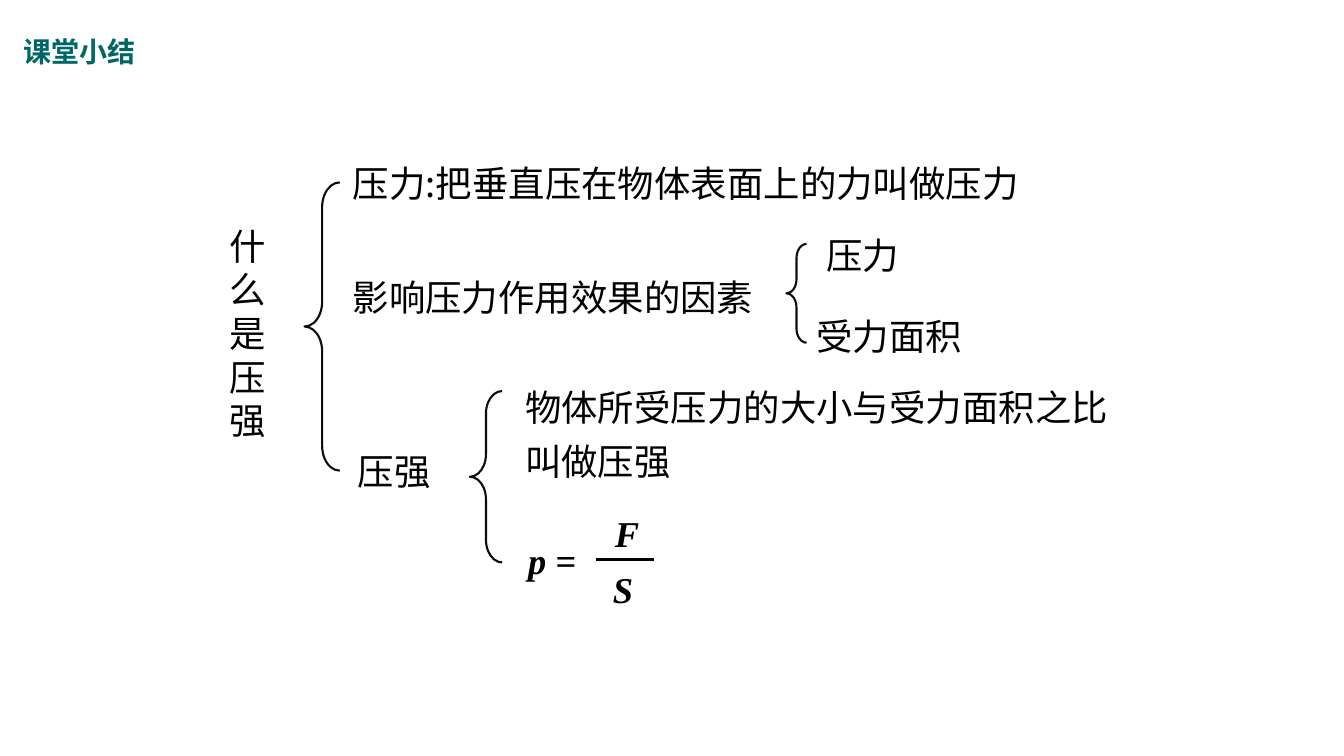
from pptx import Presentation
from pptx.dml.color import RGBColor
from pptx.enum.shapes import MSO_CONNECTOR as Connector, MSO_SHAPE as Shape
from pptx.enum.text import MSO_AUTO_SIZE as AutoSize, PP_ALIGN as Align
from pptx.oxml.ns import qn
from pptx.util import Inches, Pt
from lxml.etree import SubElement


def color(value):
    return RGBColor.from_string(value)


class SummarySlide:
    """Draws the lesson summary with one shared style on the current slide."""

    chinese = "Noto Sans CJK SC"
    formula = "Times New Roman"
    ink = "000000"
    brace_ink = "0D0D0D"
    size = 26

    def __init__(self, page):
        self.page = page
        self.shapes = page.shapes

    def start_group(self):
        self.shapes = self.page.shapes.add_group_shape().shapes

    def text(self, words, left, top, width, height, font=chinese, size=size,
             ink=ink, bold=False, italic=False, wrap=True,
             align=Align.LEFT, spacing=None):
        box = self.shapes.add_textbox(Inches(left), Inches(top),
                                      Inches(width), Inches(height))
        frame = box.text_frame
        frame.word_wrap = wrap
        frame.auto_size = AutoSize.SHAPE_TO_FIT_TEXT
        para = frame.paragraphs[0]
        para.alignment = align
        para.line_spacing = spacing
        span = para.add_run()
        span.text = words
        span.font.size = Pt(size)
        span.font.bold = bold
        span.font.italic = italic
        span.font.color.rgb = color(ink)
        span.font.name = font
        SubElement(span.font._element, qn("a:ea"), typeface=font)

    def symbol(self, words, left, top, width):
        self.text(words, left, top, width, 0.54, font=self.formula,
                  bold=True, italic=True, wrap=False)

    def brace(self, left, top, width, height):
        brace = self.shapes.add_shape(Shape.LEFT_BRACE, Inches(left), Inches(top),
                                      Inches(width), Inches(height))
        brace.shadow.inherit = False
        brace.fill.background()
        brace.line.color.rgb = color(self.brace_ink)
        brace.line.width = Pt(1.5)
        brace.adjustments[0] = 0.7
        brace.adjustments[1] = 0.5

    def fraction_bar(self, left, right, height):
        bar = self.shapes.add_connector(Connector.STRAIGHT, Inches(left), Inches(height),
                                        Inches(right), Inches(height))
        bar.line.color.rgb = color(self.ink)
        bar.line.width = Pt(2)
        SubElement(bar._element.spPr, qn("a:effectLst"))


def main():
    deck = Presentation()
    deck.slide_width = Inches(13.33)
    deck.slide_height = Inches(7.5)
    summary = SummarySlide(deck.slides.add_slide(deck.slide_layouts[6]))

    summary.text("课堂小结", 0.13, 0.29, 1.42, 0.44,
                 font="Arial", size=20, ink="006666", bold=True)
    summary.text("什么是压强", 2.15, 2.17, 0.61, 2.29, align=Align.CENTER)

    for words, left, top, width in (
        ("压力:把垂直压在物体表面上的力叫做压力", 3.4, 1.55, 7.12),
        ("影响压力作用效果的因素", 3.4, 2.68, 4.36),
        ("压力", 8.1, 2.26, 0.93),
        ("受力面积", 8, 3.07, 1.72),
        ("压强", 3.45, 4.41, 1.95),
    ):
        summary.text(words, left, top, width, 0.54)
    summary.text("物体所受压力的大小与受力面积之比叫做压强",
                 5.11, 3.66, 6.09, 1.19, spacing=1.25)

    summary.brace(3.02, 1.81, 0.35, 2.86)
    summary.brace(7.8, 2.42, 0.2, 0.98)
    summary.brace(4.66, 3.88, 0.32, 1.7)

    summary.start_group()
    summary.symbol("p =", 5.14, 5.29, 0.77)
    summary.fraction_bar(5.91, 6.49, 5.55)
    summary.symbol("F", 6, 5.02, 0.44)
    summary.symbol("S", 5.98, 5.58, 0.4)

    deck.save("out.pptx")


if __name__ == "__main__":
    main()
